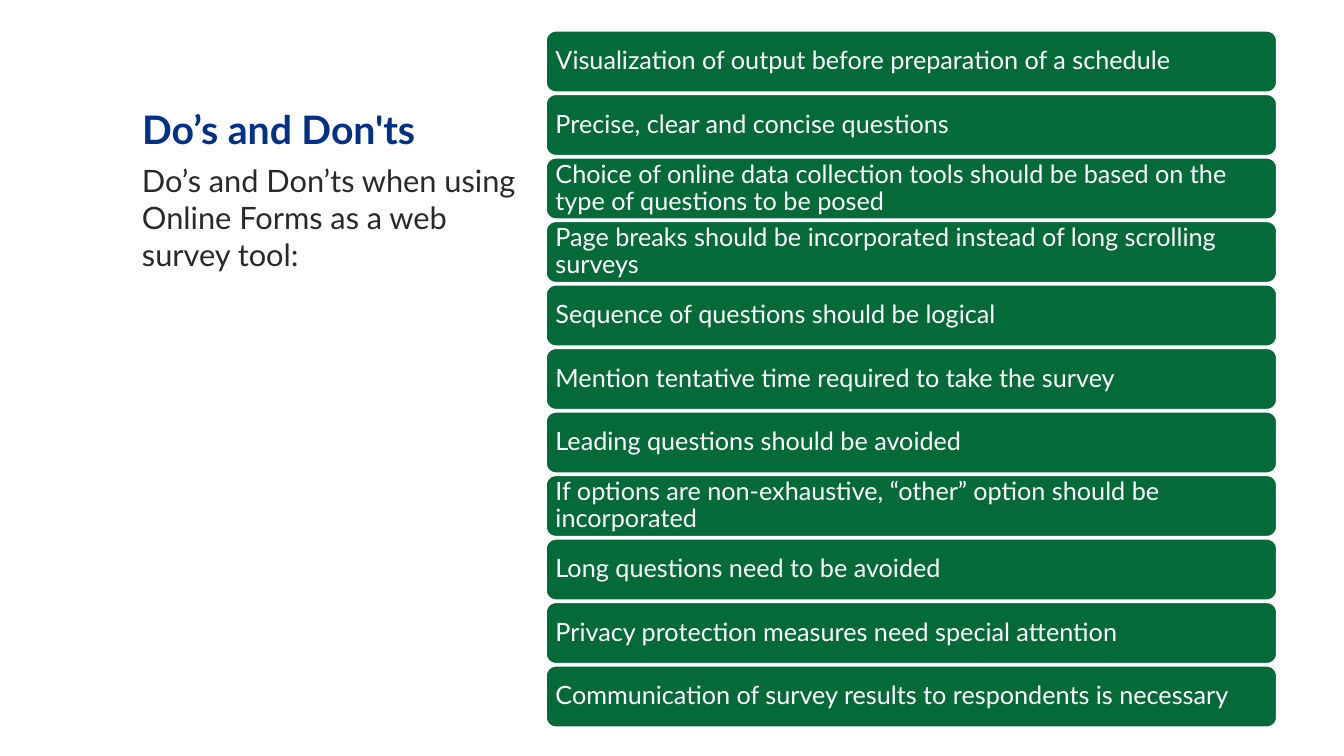
from pptx import Presentation
from pptx.dml.color import RGBColor
from pptx.enum.shapes import MSO_SHAPE
from pptx.enum.text import MSO_ANCHOR, MSO_AUTO_SIZE, PP_ALIGN
from pptx.util import Inches, Pt

COLORS = {"blue": "003087", "green": "046A38", "text": "292929", "white": "FFFFFF"}
FONT = "Lato"
GUIDELINES = [
    "Visualization of output before preparation of a schedule",
    "Precise, clear and concise questions",
    "Choice of online data collection tools should be based on the type of questions to be posed",
    "Page breaks should be incorporated instead of long scrolling surveys",
    "Sequence of questions should be logical",
    "Mention tentative time required to take the survey",
    "Leading questions should be avoided",
    "If options are non-exhaustive, “other” option should be incorporated",
    "Long questions need to be avoided",
    "Privacy protection measures need special attention",
    "Communication of survey results to respondents is necessary",
]


def color(name):
    return RGBColor.from_string(COLORS[name])


def write(shape, text, size, color_name, anchor, inset_x, inset_y, bold=False):
    """Fill a shape with one left-aligned paragraph and return it."""
    frame = shape.text_frame
    frame.text = text
    frame.word_wrap = True
    frame.auto_size = MSO_AUTO_SIZE.NONE
    frame.vertical_anchor = anchor
    frame.margin_left = frame.margin_right = Inches(inset_x)
    frame.margin_top = frame.margin_bottom = Inches(inset_y)
    para = frame.paragraphs[0]
    para.alignment = PP_ALIGN.LEFT
    para.font.name = FONT
    para.font.size = Pt(size)
    para.font.bold = bold
    para.font.color.rgb = color(color_name)
    return para


def add_heading(page, left, top, width, height):
    """Title above the introductory text."""
    title_height = 1.27
    title = page.shapes.title
    title.left, title.top = Inches(left), Inches(top)
    title.width, title.height = Inches(width), Inches(title_height)
    write(title, "Do’s and Don'ts", 28, "blue", MSO_ANCHOR.BOTTOM, 0.1, 0.05, bold=True)

    intro = page.shapes.add_textbox(Inches(left), Inches(top + title_height),
                                    Inches(width), Inches(height - title_height))
    write(intro, "Do’s and Don’ts when using Online Forms as a web survey tool:",
          22, "text", MSO_ANCHOR.TOP, 0.1, 0.05)


def add_guidelines(page, left, top, width, height):
    """Evenly stacked bars, one per guideline."""
    gap = 0.01
    pitch = (height + gap) / len(GUIDELINES)
    for index, guideline in enumerate(GUIDELINES):
        bar = page.shapes.add_shape(MSO_SHAPE.ROUNDED_RECTANGLE, Inches(left),
                                    Inches(top + index * pitch),
                                    Inches(width), Inches(pitch - gap))
        bar.shadow.inherit = False
        bar.fill.solid()
        bar.fill.fore_color.rgb = color("green")
        bar.line.color.rgb = color("white")
        bar.line.width = Pt(2)
        para = write(bar, guideline, 18, "white", MSO_ANCHOR.MIDDLE, 0.07, 0.07)
        para.line_spacing = 0.9


def main():
    deck = Presentation()
    deck.slide_width, deck.slide_height = Inches(13.33), Inches(7.5)
    page = deck.slides.add_slide(deck.slide_layouts.get_by_name("Title Only"))
    add_heading(page, 1.31, 0.29, 3.97, 6.4)
    add_guidelines(page, 5.41, 0.3, 7.26, 6.92)
    deck.save("out.pptx")


if __name__ == "__main__":
    main()
